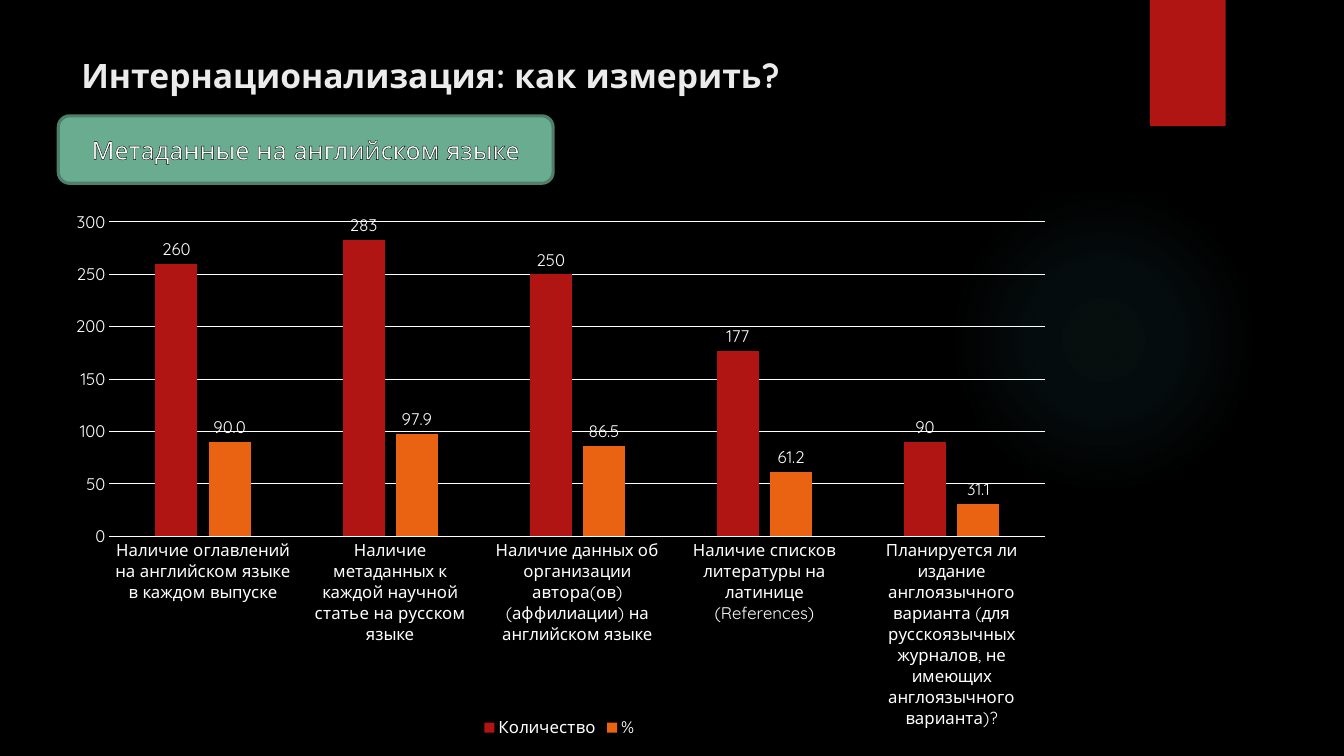
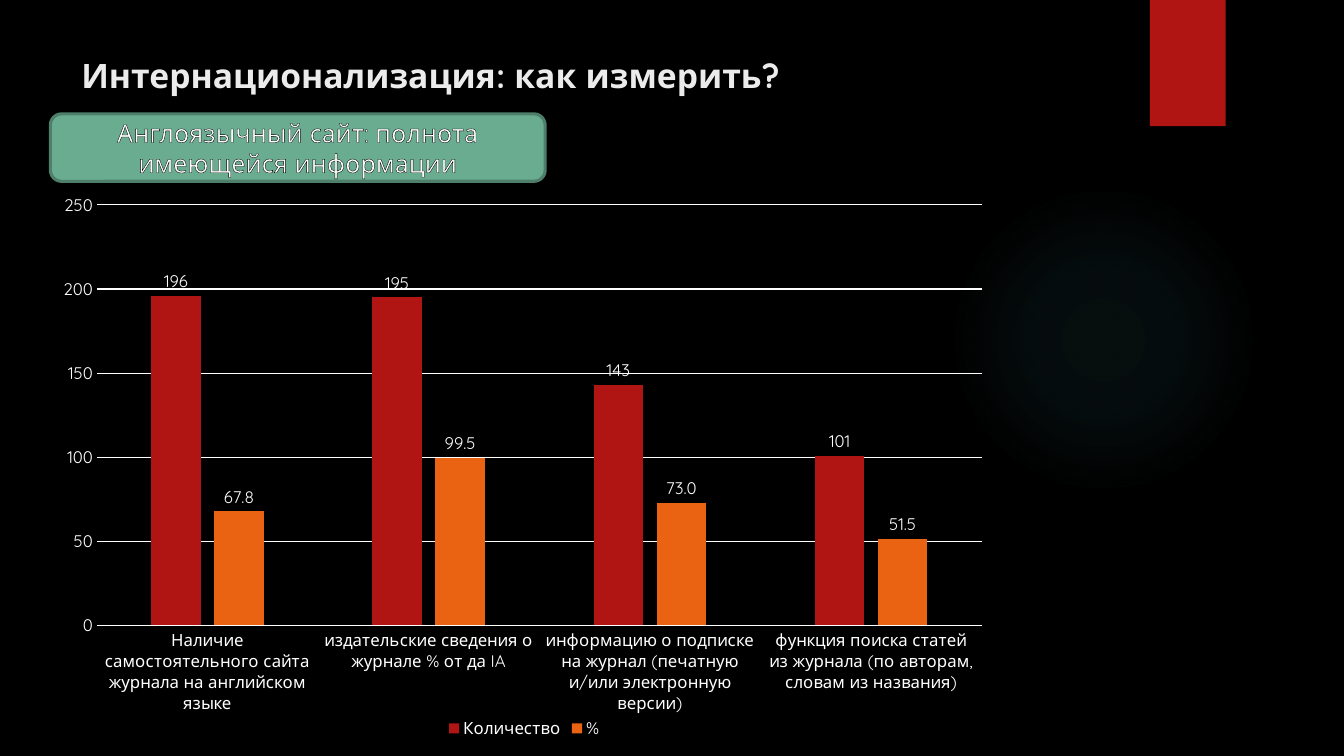
from lxml.etree import SubElement
from pptx import Presentation
from pptx.chart.data import CategoryChartData
from pptx.dml.color import RGBColor
from pptx.enum.chart import XL_CHART_TYPE, XL_LABEL_POSITION, XL_LEGEND_POSITION, XL_TICK_MARK
from pptx.enum.shapes import MSO_SHAPE
from pptx.enum.text import MSO_ANCHOR, PP_ALIGN
from pptx.oxml import parse_xml
from pptx.oxml.ns import nsdecls, qn
from pptx.util import Cm, Pt

BLACK = RGBColor(0x00, 0x00, 0x00)
WHITE = RGBColor(0xFF, 0xFF, 0xFF)
PALE = RGBColor(0xEB, 0xEB, 0xEB)
RED = RGBColor(0xB0, 0x15, 0x13)
ORANGE = RGBColor(0xEA, 0x63, 0x12)
GREEN = RGBColor(0x6A, 0xAC, 0x90)
DARK_GREEN = RGBColor(0x4E, 0x7F, 0x6B)
TEAL = RGBColor(0x50, 0xB9, 0xC1)
FACE = "Quicksand"

TITLE = "Интернационализация: как измерить?"
TITLE_FONT = {"name": FACE, "size": Pt(24), "bold": True}
BADGE_FONT = {"name": FACE, "size": Pt(18)}
CHART_FONT = {"name": FACE, "size": Pt(12)}
GLOW = [(0, 7), (36, 6), (69, 0)]  # position and opacity, percent
SERIES = [("Количество", RED, "General"), ("%", ORANGE, "0.0")]

# Boxes are left, top, width, height in centimetres; plot holds chart fractions.
SLIDES = [
    {
        "badge": "Метаданные на английском языке",
        "badge_box": (1.47, 2.92, 12.47, 1.7),
        "chart_box": (1.47, 5.16, 25.25, 13.54),
        "plot": (0.051, 0.032, 0.934, 0.585),
        "top": 300,
        "rows": [
            ("Наличие оглавлений на английском языке в каждом выпуске", 260, 90),
            ("Наличие метаданных к каждой научной статье на русском языке", 283, 97.9),
            ("Наличие данных об организации автора(ов) (аффилиации) на английском языке", 250, 86.5),
            ("Наличие списков литературы на латинице (References)", 177, 61.2),
            ("Планируется ли издание англоязычного варианта (для русскоязычных журналов, "
             "не имеющих англоязычного варианта)?", 90, 31.1),
        ],
    },
    {
        "badge": "Англоязычный сайт: полнота имеющейся информации",
        "badge_box": (1.27, 2.87, 12.47, 1.7),
        "chart_box": (1.27, 4.57, 23.88, 14.15),
        "plot": (0.049, 0.042, 0.934, 0.749),
        "top": 250,
        "rows": [
            ("Наличие самостоятельного сайта журнала на английском языке", 196, 67.8),
            ("издательские сведения о журнале % от да IA", 195, 99.5),
            ("информацию о подписке на журнал (печатную и/или электронную версии)", 143, 73),
            ("функция поиска статей из журнала (по авторам, словам из названия)", 101, 51.5),
        ],
    },
]


def place(box):
    return [Cm(length) for length in box]


def style(font, values, color):
    for name, value in values.items():
        setattr(font, name, value)
    font.color.rgb = color


def add_block(slide, kind, box, color):
    """Add a filled shape with neither line nor shadow."""
    shape = slide.shapes.add_shape(kind, *place(box))
    shape.shadow.inherit = False
    shape.fill.solid()
    shape.fill.fore_color.rgb = color
    shape.line.fill.background()
    return shape


def add_glow(slide):
    glow = add_block(slide, MSO_SHAPE.OVAL, (23.9, 4.65, 7.82, 7.82), TEAL)
    stops = "".join(
        f'<a:gs pos="{pos * 1000}"><a:srgbClr val="{TEAL}">'
        f'<a:alpha val="{alpha * 1000}"/></a:srgbClr></a:gs>'
        for pos, alpha in GLOW)
    props = glow.element.spPr
    props.replace(props.find(qn("a:solidFill")), parse_xml(
        f'<a:gradFill {nsdecls("a")}><a:gsLst>{stops}</a:gsLst><a:path path="circle">'
        '<a:fillToRect l="50000" t="50000" r="50000" b="50000"/></a:path></a:gradFill>'))


def add_ribbon(slide):
    ribbon = add_block(slide, MSO_SHAPE.RECTANGLE, (28.98, 0, 1.91, 3.18), RED)
    effects = ribbon.element.spPr.find(qn("a:effectLst"))
    shadow = SubElement(effects, qn("a:outerShdw"), blurRad=str(Pt(3)),
                        dist=str(Pt(2)), dir="5400000", rotWithShape="0")
    color = SubElement(shadow, qn("a:srgbClr"), val=str(BLACK))
    SubElement(color, qn("a:alpha"), val="45000")


def add_title(slide):
    frame = slide.shapes.add_textbox(*place((1.8, 1.27, 26.14, 3.88))).text_frame
    frame.word_wrap = True
    frame.vertical_anchor = MSO_ANCHOR.TOP
    run = frame.paragraphs[0].add_run()
    run.text = TITLE
    style(run.font, TITLE_FONT, PALE)


def add_badge(slide, text, box):
    badge = add_block(slide, MSO_SHAPE.ROUNDED_RECTANGLE, box, GREEN)
    badge.line.color.rgb = DARK_GREEN
    badge.line.width = Pt(2.25)
    frame = badge.text_frame
    frame.word_wrap = True
    frame.vertical_anchor = MSO_ANCHOR.MIDDLE
    para = frame.paragraphs[0]
    para.alignment = PP_ALIGN.CENTER
    run = para.add_run()
    run.text = text
    style(run.font, BADGE_FONT, WHITE)
    run.font._element.insert(0, parse_xml(
        f'<a:ln {nsdecls("a")} w="{Pt(0.75)}"><a:solidFill>'
        f'<a:srgbClr val="{BLACK}"/></a:solidFill></a:ln>'))


def set_plot(chart, fractions):
    """Fix the inner plot area as fractions of the chart."""
    area = chart.element.find(".//" + qn("c:plotArea"))
    for old in area.findall(qn("c:layout")):
        area.remove(old)
    layout = parse_xml(f'<c:layout {nsdecls("c")}/>')
    manual = SubElement(layout, qn("c:manualLayout"))
    values = [("layoutTarget", "inner"), ("xMode", "edge"), ("yMode", "edge")]
    for name, value in values + list(zip("xywh", fractions)):
        SubElement(manual, qn("c:" + name), val=str(value))
    area.insert(0, layout)


def style_axes(chart, top):
    names, scale = chart.category_axis, chart.value_axis
    for axis in (names, scale):
        axis.major_tick_mark = axis.minor_tick_mark = XL_TICK_MARK.NONE
        style(axis.tick_labels.font, CHART_FONT, WHITE)
    scale.minimum_scale, scale.maximum_scale, scale.major_unit = 0, top, 50
    scale.has_major_gridlines = True
    for line in (names.format.line, scale.major_gridlines.format.line):
        line.color.rgb = WHITE
        line.width = Pt(0.75)
    scale.format.line.fill.background()


def add_bars(slide, info):
    names, *columns = zip(*info["rows"])
    data = CategoryChartData()
    data.categories = names
    for (name, _, form), values in zip(SERIES, columns):
        data.add_series(name, values, form)
    chart = slide.shapes.add_chart(
        XL_CHART_TYPE.COLUMN_CLUSTERED, *place(info["chart_box"]), data).chart
    chart.has_title = False
    style(chart.font, CHART_FONT, WHITE)
    chart.has_legend = True
    chart.legend.position = XL_LEGEND_POSITION.BOTTOM
    chart.legend.include_in_layout = False
    style(chart.legend.font, CHART_FONT, WHITE)
    style_axes(chart, info["top"])
    plot = chart.plots[0]
    plot.gap_width, plot.overlap, plot.vary_by_categories = 219, -27, False
    for series, (_, color, form) in zip(plot.series, SERIES):
        series.format.fill.solid()
        series.format.fill.fore_color.rgb = color
        labels = series.data_labels
        labels.show_value = True
        labels.number_format = form
        labels.number_format_is_linked = False
        labels.position = XL_LABEL_POSITION.OUTSIDE_END
        style(labels.font, CHART_FONT, WHITE)
    set_plot(chart, info["plot"])


def main():
    deck = Presentation()
    deck.slide_width, deck.slide_height = Cm(33.87), Cm(19.05)
    for info in SLIDES:
        slide = deck.slides.add_slide(deck.slide_layouts[6])
        slide.background.fill.solid()
        slide.background.fill.fore_color.rgb = BLACK
        add_glow(slide)
        add_ribbon(slide)
        add_title(slide)
        add_badge(slide, info["badge"], info["badge_box"])
        add_bars(slide, info)
    deck.save("out.pptx")


if __name__ == "__main__":
    main()
